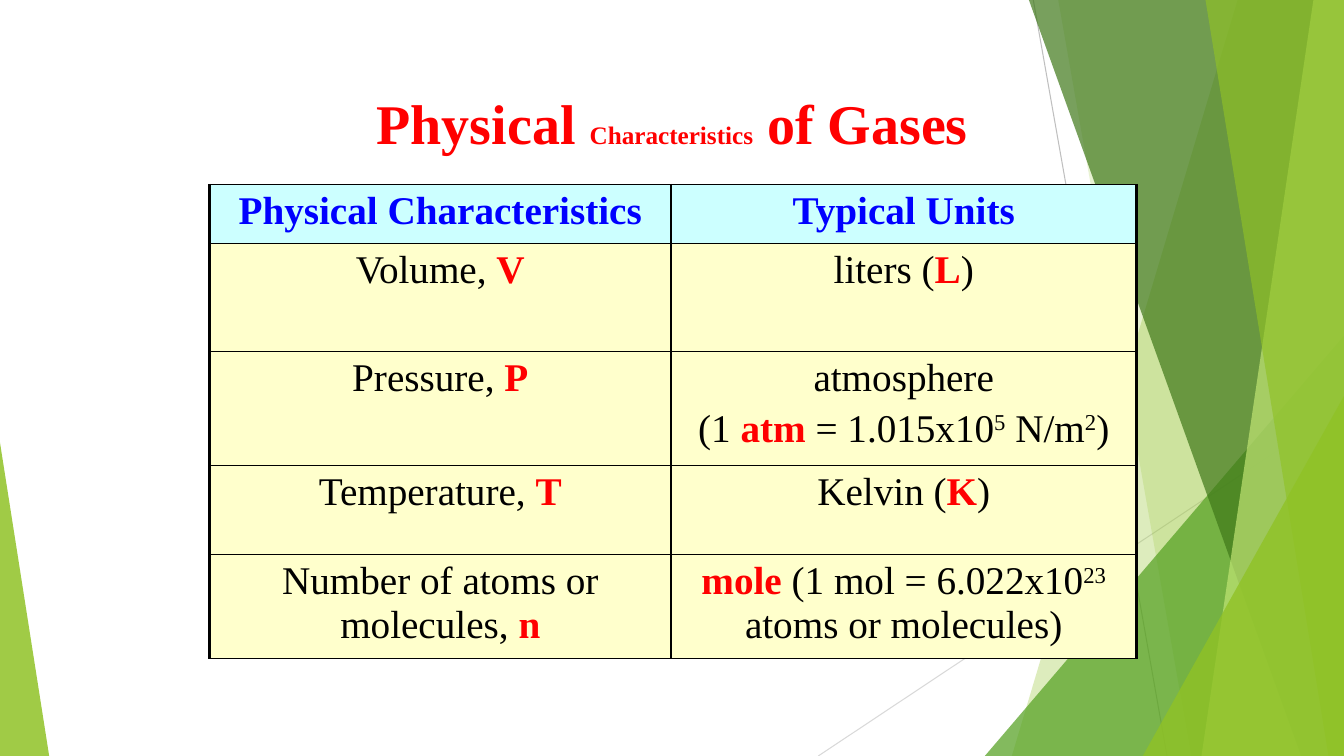
from lxml.etree import SubElement
from pptx import Presentation
from pptx.dml.color import RGBColor
from pptx.enum.shapes import MSO_CONNECTOR, MSO_SHAPE
from pptx.enum.text import MSO_ANCHOR, PP_ALIGN
from pptx.oxml.ns import qn
from pptx.util import Cm, Pt

FONT = "Times New Roman"
BLACK = RGBColor(0x00, 0x00, 0x00)
RED = RGBColor(0xFF, 0x00, 0x00)
BLUE = RGBColor(0x00, 0x00, 0xFF)
PALE_CYAN = RGBColor(0xCC, 0xFF, 0xFF)
PALE_YELLOW = RGBColor(0xFF, 0xFF, 0xCC)
GREEN = RGBColor(0x90, 0xC2, 0x26)
MID_GREEN = RGBColor(0x54, 0xA0, 0x21)
DARK_GREEN = RGBColor(0x3F, 0x78, 0x19)
LIGHT_GREEN = RGBColor(0xC0, 0xE4, 0x74)
GRAY = RGBColor(0xBF, 0xBF, 0xBF)
LIGHT_GRAY = RGBColor(0xD9, 0xD9, 0xD9)

WIDTH, HEIGHT = 33.87, 19.05  # all lengths in cm

TITLE = [("Physical ", 40), ("Characteristics", 18), (" of Gases", 40)]

# Run styles: colour, bold, superscript
HEAD = (BLUE, True, False)
PLAIN = (BLACK, False, False)
KEY = (RED, True, False)
SUP = (BLACK, False, True)

# Rows hold cells, cells hold paragraphs, paragraphs hold runs
ROWS = [
    ([[("Physical Characteristics", HEAD)]],
     [[("Typical Units", HEAD)]]),
    ([[("Volume, ", PLAIN), ("V", KEY)]],
     [[("liters (", PLAIN), ("L", KEY), (")", PLAIN)]]),
    ([[("Pressure, ", PLAIN), ("P", KEY)]],
     [[("atmosphere", PLAIN)],
      [("(1 ", PLAIN), ("atm", KEY), (" = 1.015x10", PLAIN), ("5", SUP),
       (" N/m", PLAIN), ("2", SUP), (")", PLAIN)]]),
    ([[("Temperature, ", PLAIN), ("T", KEY)]],
     [[("Kelvin (", PLAIN), ("K", KEY), (")", PLAIN)]]),
    ([[("Number of atoms or molecules, ", PLAIN), ("n", KEY)]],
     [[("mole ", KEY), ("(1 mol = 6.022x10", PLAIN), ("23", SUP),
       (" atoms or molecules)", PLAIN)]]),
]
COL_WIDTHS = [11.63, 11.73]
ROW_HEIGHTS = [1.48, 2.72, 2.87, 2.26, 2.62]

# Start x, start y, end x, end y, colour
RAYS = [(26.04, 0, 29.41, HEIGHT, GRAY), (WIDTH, 10.24, 20.62, HEIGHT, LIGHT_GRAY)]
# Bands reach the right edge: top x, bottom x, colour, opacity in percent
BACK_BANDS = [(31.19, 25.5, GREEN, 30), (26.67, 30.02, GREEN, 20)]
FRONT_BANDS = [(25.93, 32.79, DARK_GREEN, 70), (33.1, 30.28, LIGHT_GREEN, 70),
               (30.38, 33.48, GREEN, 65)]
# Triangles stand on the bottom edge: left, right, top, apex, colour, opacity
BACK_TRIANGLE = (24.82, WIDTH, 8.46, 1, MID_GREEN, 72)
FRONT_TRIANGLE = (28.8, WIDTH, 9.98, 1, GREEN, 80)
LEFT_TRIANGLE = (0, 1.24, 11.15, 0, GREEN, 85)


def paint(sp, color, opacity):
    sp.shadow.inherit = False
    sp.line.fill.background()
    sp.fill.solid()
    sp.fill.fore_color.rgb = color
    clr = sp._element.spPr.find(qn("a:solidFill"))[0]
    SubElement(clr, qn("a:alpha"), val=str(opacity * 1000))


def add_ray(shapes, x1, y1, x2, y2, color):
    ray = shapes.add_connector(MSO_CONNECTOR.STRAIGHT, Cm(x1), Cm(y1), Cm(x2), Cm(y2))
    ray.line.color.rgb = color
    ray.line.width = Pt(0.75)
    SubElement(ray._element.spPr, qn("a:effectLst"))


def add_band(shapes, top_x, bottom_x, color, opacity):
    builder = shapes.build_freeform(Cm(top_x), 0)
    corners = [(WIDTH, 0), (WIDTH, HEIGHT), (bottom_x, HEIGHT)]
    builder.add_line_segments([(Cm(x), Cm(y)) for x, y in corners])
    paint(builder.convert_to_shape(), color, opacity)


def add_triangle(shapes, left, right, top, apex, color, opacity):
    sp = shapes.add_shape(MSO_SHAPE.ISOSCELES_TRIANGLE, Cm(left), Cm(top),
                          Cm(right - left), Cm(HEIGHT - top))
    sp.adjustments[0] = apex
    paint(sp, color, opacity)


def add_run(p, text, size, color, bold):
    r = p.add_run()
    r.text = text
    r.font.name = FONT
    r.font.size = Pt(size)
    r.font.bold = bold
    r.font.color.rgb = color
    return r


def set_borders(cell, widths):
    tc_pr = cell._tc.get_or_add_tcPr()
    for side, width in widths.items():
        ln = SubElement(tc_pr, qn("a:ln" + side), w=str(Pt(width)))
        fill = SubElement(ln, qn("a:solidFill"))
        SubElement(fill, qn("a:srgbClr"), val=str(BLACK))


def fill_cell(cell, paragraphs, color):
    cell.fill.solid()
    cell.fill.fore_color.rgb = color
    tf = cell.text_frame
    for i, runs in enumerate(paragraphs):
        p = tf.add_paragraph() if i else tf.paragraphs[0]
        p.alignment = PP_ALIGN.CENTER
        p.space_before = Pt(5.6)
        for text, (ink, bold, raised) in runs:
            r = add_run(p, text, 28, ink, bold)
            if raised:
                r.font._element.set("baseline", "30000")


def add_units_table(shapes):
    table = shapes.add_table(len(ROWS), len(COL_WIDTHS), Cm(5.28), Cm(4.65),
                             Cm(sum(COL_WIDTHS)), Cm(sum(ROW_HEIGHTS))).table
    table.first_row = table.horz_banding = False
    for col, width in zip(table.columns, COL_WIDTHS):
        col.width = Cm(width)
    for i, (row, height) in enumerate(zip(table.rows, ROW_HEIGHTS)):
        row.height = Cm(height)
        for j, paragraphs in enumerate(ROWS[i]):
            cell = table.cell(i, j)
            set_borders(cell, {"L": 1 if j else 2.25, "R": 2.25 if j else 1, "T": 1, "B": 1})
            fill_cell(cell, paragraphs, PALE_YELLOW if i else PALE_CYAN)


def add_title(title):
    title.left, title.top, title.width, title.height = Cm(5.51), Cm(2.11), Cm(22.86), Cm(1.96)
    tf = title.text_frame
    tf.word_wrap = True
    tf.vertical_anchor = MSO_ANCHOR.TOP
    p = tf.paragraphs[0]
    p.alignment = PP_ALIGN.CENTER
    for text, size in TITLE:
        add_run(p, text, size, RED, True)


def main():
    prs = Presentation()
    prs.slide_width, prs.slide_height = Cm(WIDTH), Cm(HEIGHT)
    slide = prs.slides.add_slide(prs.slide_layouts[5])
    shapes = slide.shapes
    for ray in RAYS:
        add_ray(shapes, *ray)
    for band in BACK_BANDS:
        add_band(shapes, *band)
    add_triangle(shapes, *BACK_TRIANGLE)
    for band in FRONT_BANDS:
        add_band(shapes, *band)
    for triangle in (FRONT_TRIANGLE, LEFT_TRIANGLE):
        add_triangle(shapes, *triangle)
    add_title(shapes.title)
    add_units_table(shapes)
    prs.save("out.pptx")


if __name__ == "__main__":
    main()
